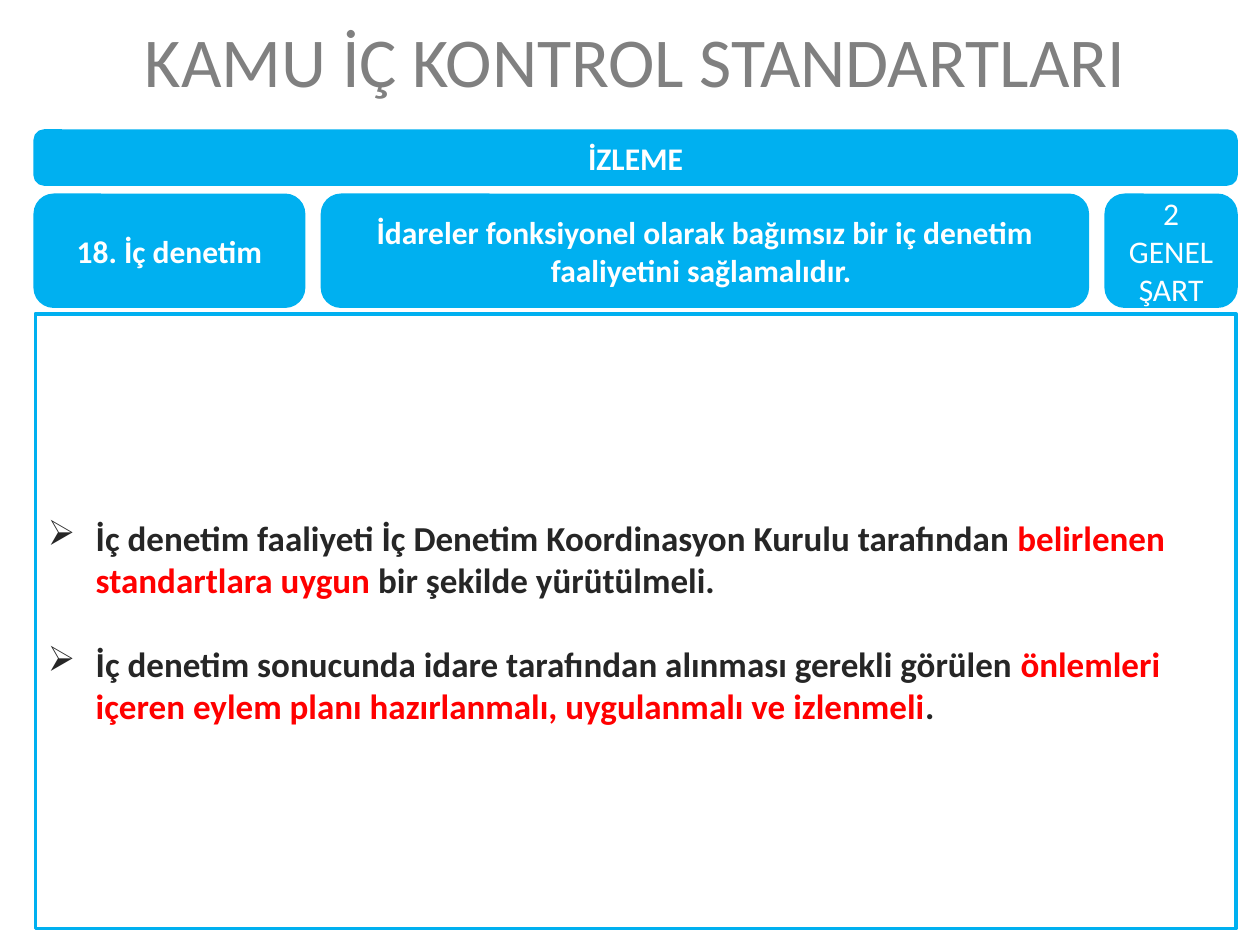
import pptx
import pptx.util
import pptx.dml.color
import pptx.enum.shapes
import pptx.enum.text
import lxml.etree

Inches, Pt = pptx.util.Inches, pptx.util.Pt
ALIGN = pptx.enum.text.PP_ALIGN
BLUE, WHITE, GREY, DARK, RED = "00B0F0", "FFFFFF", "808080", "262626", "FF0000"
LEFT, WIDTH, GAP = 0.28, 9.53, 0.15
ITEMS = [
    [("İç denetim faaliyeti İç Denetim Koordinasyon Kurulu tarafından ", DARK),
     ("belirlenen standartlara uygun", RED),
     (" bir şekilde yürütülmeli.", DARK)],
    [("İç denetim sonucunda idare tarafından alınması gerekli görülen ", DARK),
     ("önlemleri içeren eylem planı hazırlanmalı, uygulanmalı ve izlenmeli", RED),
     (".", DARK)],
]


def color(code):
    return pptx.dml.color.RGBColor.from_string(code)


def place(shape, box):
    shape.left, shape.top, shape.width, shape.height = map(Inches, box)
    frame = shape.text_frame
    frame.word_wrap = True
    frame.auto_size = pptx.enum.text.MSO_AUTO_SIZE.NONE
    frame.vertical_anchor = pptx.enum.text.MSO_ANCHOR.MIDDLE
    return frame


def paint(shape, fill):
    shape.fill.solid()
    shape.fill.fore_color.rgb = color(fill)
    shape.line.color.rgb = color(BLUE)
    shape.line.width = Pt(2)


def style(para, size, bold, align):
    para.alignment = align
    para.font.name = "Calibri"
    para.font.size = Pt(size)
    para.font.bold = bold


def label(frame, text, size, code, bold):
    frame.text = text
    para = frame.paragraphs[0]
    style(para, size, bold, ALIGN.CENTER)
    para.font.color.rgb = color(code)


def card(slide, box, text, bold=True):
    kind = pptx.enum.shapes.MSO_SHAPE.ROUNDED_RECTANGLE
    shape = slide.shapes.add_shape(kind, *map(Inches, box))
    shape.shadow.inherit = False
    paint(shape, BLUE)
    label(place(shape, box), text, 18, WHITE, bold)


def header(slide, left, top, width, height):
    cards = [("18. İç denetim", 2.13, True),
             ("İdareler fonksiyonel olarak bağımsız bir iç denetim "
              "faaliyetini sağlamalıdır. ", 6.07, True),
             ("2 GENEL ŞART", width - 2.13 - 6.07 - 2 * GAP, False)]
    bar = 0.42
    card(slide, (left, top, width, bar), "İZLEME")
    row = top + bar + 0.09
    for text, wide, bold in cards:
        card(slide, (left, row, wide, top + height - row), text, bold)
        left += wide + GAP


def bullet(para):
    props = para._p.get_or_add_pPr()
    props.set("marL", str(Inches(0.38)))
    props.set("indent", str(-Inches(0.38)))
    space = "{http://schemas.openxmlformats.org/drawingml/2006/main}"
    lxml.etree.SubElement(props, space + "buFont", typeface="Wingdings")
    lxml.etree.SubElement(props, space + "buChar", char="Ø")


def body(shape, box):
    frame = place(shape, box)
    paint(shape, WHITE)
    for i, runs in enumerate(ITEMS):
        para = frame.paragraphs[0] if i == 0 else frame.add_paragraph()
        bullet(para)
        style(para, 20, True, ALIGN.LEFT)
        para.space_before = Pt(24 * i)
        for text, code in runs:
            run = para.add_run()
            run.text = text
            run.font.color.rgb = color(code)


def main():
    deck = pptx.Presentation()
    deck.slide_width, deck.slide_height = Inches(10), Inches(7.5)
    slide = deck.slides.add_slide(deck.slide_layouts[1])
    title, text = slide.placeholders
    label(place(title, (0.14, 0, 9.8, 0.94)), "KAMU İÇ KONTROL STANDARTLARI",
          40, GREY, False)
    header(slide, LEFT, 1.04, WIDTH, 1.39)
    body(text, (LEFT, 2.49, WIDTH, 4.88))
    deck.save("out.pptx")


if __name__ == "__main__":
    main()
